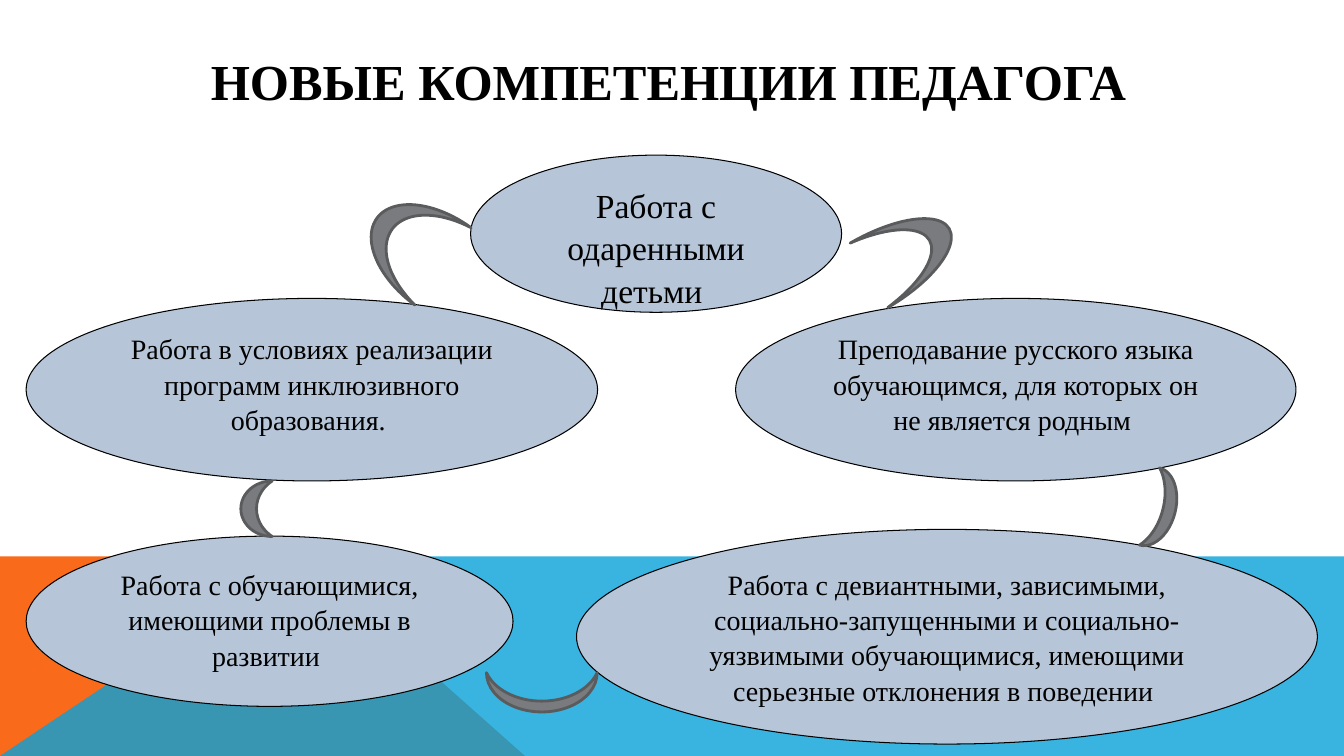
from dataclasses import dataclass

from lxml.etree import SubElement
from pptx import Presentation
from pptx.dml.color import RGBColor
from pptx.enum.shapes import MSO_SHAPE as Preset
from pptx.enum.text import MSO_ANCHOR as Anchor, PP_ALIGN as Align
from pptx.oxml.ns import qn
from pptx.slide import Slide
from pptx.util import Cm, Pt

WIDTH, HEIGHT, HORIZON = 33.87, 19.05, 14.02

FLOORS = [
    ([(0, HEIGHT), (0, HORIZON), (7.57, HORIZON), (13.23, HEIGHT)], "F96A1B", 100),
    ([(0, HEIGHT), (7.54, HORIZON), (WIDTH, HORIZON), (WIDTH, HEIGHT)], "08A1D9", 80),
]

COMPETENCIES = [
    ((11.86, 3.91, 9.35, 3.96), 24, "Работа с одаренными детьми "),
    ((0.66, 7.52, 14.4, 4.6), 20,
     "Работа в условиях реализации программ инклюзивного образования. "),
    ((18.54, 7.52, 14.12, 4.6), 20,
     "Преподавание русского языка обучающимся, для которых он не является родным "),
    ((0.66, 13.51, 12.27, 4.29), 20,
     "Работа с обучающимися, имеющими проблемы в развитии "),
    ((14.53, 13.34, 18.67, 5.41), 20,
     "Работа с девиантными, зависимыми, социально-запущенными и "
     "социально-уязвимыми обучающимися, имеющими серьезные отклонения в поведении "),
]

LINKS = [
    ((21.74, 5.41, 2.34, 1.88), 149.8, 0.247),
    ((28.96, 11.84, 0.66, 2.01), 194.6, 0.481),
    ((13.16, 16.05, 0.99, 2.79), 270, 0.276),
    ((6.07, 12.12, 0.79, 1.4), 0, 0.5),
    ((9.3, 4.9, 2.06, 2.41), 36.1, 0.23),
]


def color(value):
    return RGBColor.from_string(value)


@dataclass
class Board:
    """Draws the elements of the slide in one common style."""

    slide: Slide
    font: str = "Times New Roman"
    ink: str = "000000"
    oval_fill: str = "B6C5D7"
    link_fill: str = "797B7E"
    link_line: str = "5A5B5D"

    def paint(self, shape, fill, line=None, weight=0):
        shape.shadow.inherit = False
        shape.fill.solid()
        shape.fill.fore_color.rgb = color(fill)
        if line:
            shape.line.color.rgb = color(line)
            shape.line.width = Pt(weight)
        else:
            shape.line.fill.background()

    def add_text(self, shape, text, size, anchor, bold=False, spacing=1.0):
        frame = shape.text_frame
        frame.word_wrap = True
        frame.vertical_anchor = anchor
        paragraph = frame.paragraphs[0]
        paragraph.alignment = Align.CENTER
        paragraph.line_spacing = spacing
        run = paragraph.add_run()
        run.text = text
        run.font.name = self.font
        run.font.size = Pt(size)
        run.font.bold = bold
        run.font.color.rgb = color(self.ink)

    def floor(self, points, fill, opacity):
        start, *rest = [(Cm(x), Cm(y)) for x, y in points]
        builder = self.slide.shapes.build_freeform(*start)
        builder.add_line_segments(rest, close=True)
        shape = builder.convert_to_shape()
        self.paint(shape, fill)
        if opacity < 100:
            tint = next(shape.element.iter(qn("a:srgbClr")))
            SubElement(tint, qn("a:alpha")).set("val", str(opacity * 1000))

    def title(self, box, text):
        shape = self.slide.shapes.add_textbox(*map(Cm, box))
        self.add_text(shape, text, 36, Anchor.MIDDLE, bold=True)

    def oval(self, box, size, text):
        shape = self.slide.shapes.add_shape(Preset.OVAL, *map(Cm, box))
        self.paint(shape, self.oval_fill, self.ink, 0.75)
        self.add_text(shape, text, size, Anchor.TOP, spacing=1.05)

    def link(self, box, rotation, thickness):
        shape = self.slide.shapes.add_shape(Preset.MOON, *map(Cm, box))
        shape.adjustments[0] = thickness
        shape.rotation = rotation
        self.paint(shape, self.link_fill, self.link_line, 2)


def main():
    presentation = Presentation()
    presentation.slide_width = Cm(WIDTH)
    presentation.slide_height = Cm(HEIGHT)
    board = Board(presentation.slides.add_slide(presentation.slide_layouts[6]))
    for floor in FLOORS:
        board.floor(*floor)
    board.title((0.41, 0.33, 32.89, 3.4), "НОВЫЕ КОМПЕТЕНЦИИ ПЕДАГОГА")
    for competency in COMPETENCIES:
        board.oval(*competency)
    for link in LINKS:
        board.link(*link)
    presentation.save("out.pptx")


if __name__ == "__main__":
    main()
